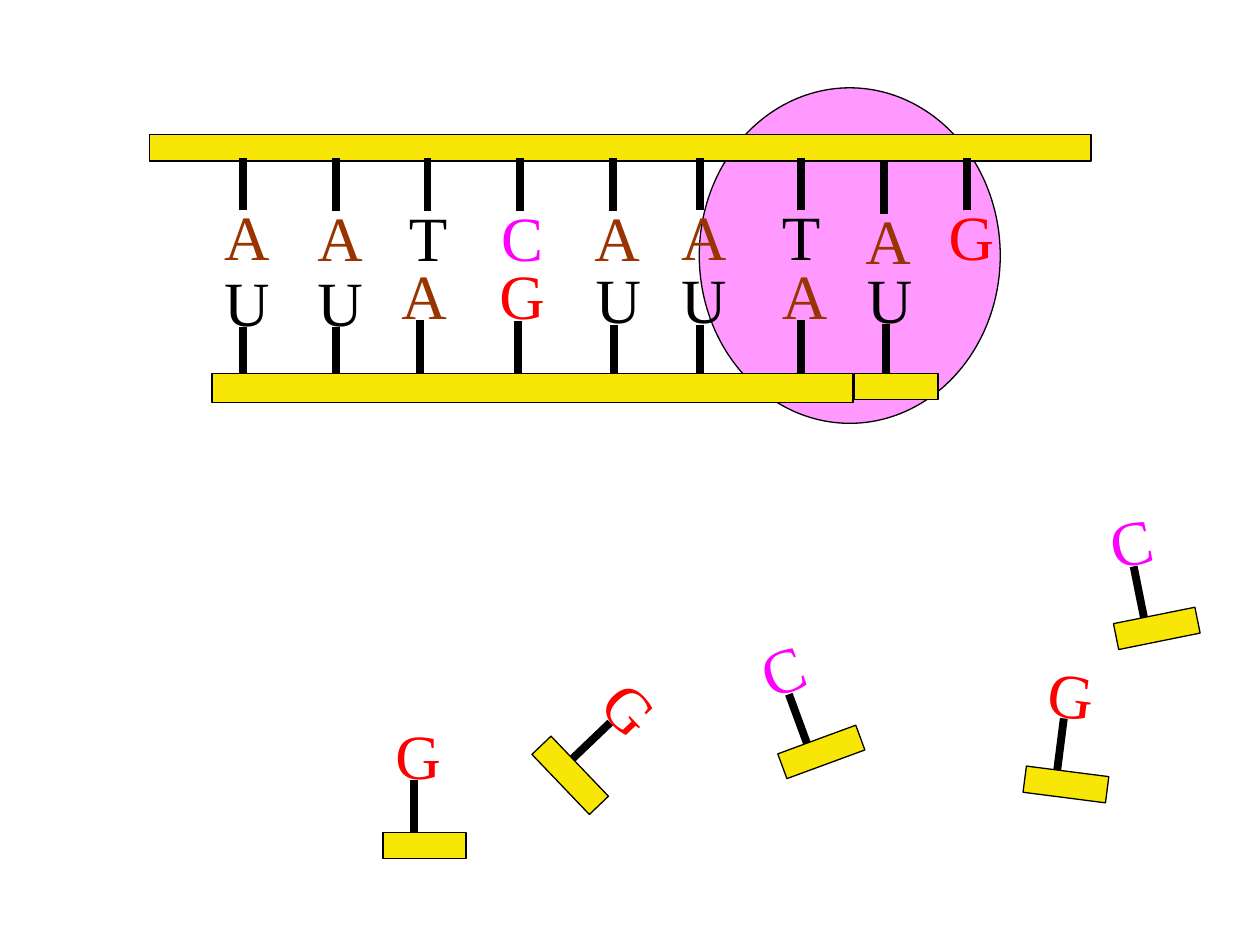
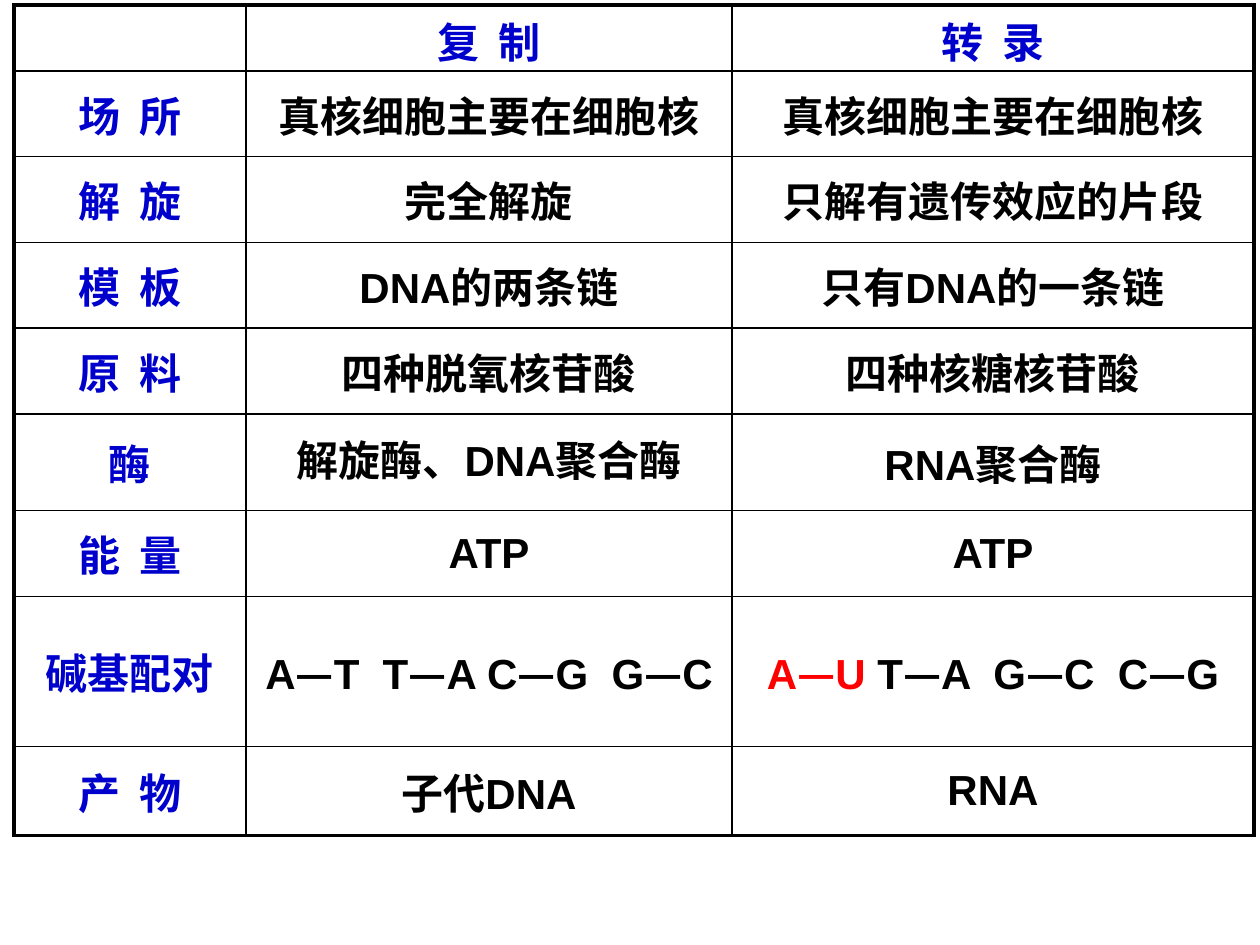
from dataclasses import dataclass
from math import cos, radians, sin

from lxml import etree
from pptx import Presentation
from pptx.dml.color import RGBColor
from pptx.enum.shapes import MSO_CONNECTOR, MSO_SHAPE
from pptx.enum.text import MSO_ANCHOR, PP_ALIGN
from pptx.oxml.ns import qn
from pptx.util import Pt

BLACK, RED, BLUE = "000000", "FF0000", "0000CC"
YELLOW, PINK = "F8E706", "FF99FF"
BASE_COLORS = {"A": "993300", "T": BLACK, "U": BLACK, "G": RED, "C": "FF00FF"}
SERIF, SANS, CJK = "Times New Roman", "Arial", "Noto Sans CJK SC"

LETTER_W, LETTER_H = 47.5, 49.7
BAR_W, BAR_H, BAR_DY = 47.5, 15.1, 52.5
STEM_DX = -6
UP_STEM, DOWN_STEM = (-14, -44.3), (15.2, 45.2)
THIN, THICK = 1, 2.25


@dataclass
class Base:
    letter: str
    cx: float
    cy: float
    angle: float = 0

    def place(self, dx: float, dy: float) -> tuple[float, float]:
        c, s = cos(radians(self.angle)), sin(radians(self.angle))
        return self.cx + dx * c - dy * s, self.cy + dx * s + dy * c


TEMPLATE = [
    Base("A", 144.7, 134.3), Base("A", 198, 134.7), Base("T", 250.3, 134.7),
    Base("C", 303.1, 134.7), Base("A", 356.4, 134.7), Base("A", 405.9, 134.3),
    Base("T", 463.5, 134.3), Base("A", 511.2, 136.4), Base("G", 558.7, 134.3),
]
TRANSCRIPT = [
    Base("U", 144.7, 171.7), Base("U", 198, 171.7), Base("A", 246, 167.8),
    Base("G", 302, 168.1), Base("U", 357.1, 170.3), Base("U", 405.9, 170.3),
    Base("A", 463.5, 167.8), Base("U", 512.1, 169.9),
]
FREE = [
    Base("G", 242.6, 430.7), Base("C", 650.7, 307.6, -11.4),
    Base("G", 363.8, 406.8, 46.3), Base("C", 451.2, 380.4, -20.2),
    Base("G", 615.8, 396.2, 7.3),
]

COLUMNS = [132.5, 277.9, 298.1]
ROW_HEIGHTS = [37.4, 49, 49, 49, 49, 55.4, 49, 85.7, 51.1]
ROWS = [
    ("", "复  制", "转  录"),
    ("场  所", "真核细胞主要在细胞核", "真核细胞主要在细胞核"),
    ("解  旋", "完全解旋", "只解有遗传效应的片段"),
    ("模  板", "DNA的两条链", "只有DNA的一条链"),
    ("原  料", "四种脱氧核苷酸", "四种核糖核苷酸"),
    ("酶", "解旋酶、DNA聚合酶", "RNA聚合酶"),
    ("能  量", "ATP", "ATP"),
    ("碱基配对", "A—T  T—A C—G  G—C", "A—U T—A  G—C  C—G"),
    ("产  物", "子代DNA", "RNA"),
]
NEW_PAIR = "A—U "
TIGHT_CELL = (5, 1)


def rgb(color: str) -> RGBColor:
    return RGBColor.from_string(color)


def add_run(p, text: str, font: str, size: float, color: str, bold: bool = False) -> None:
    r = p.add_run()
    r.text = text
    f = r.font
    f.name, f.size, f.bold = font, Pt(size), bold
    f.color.rgb = rgb(color)
    ea = etree.SubElement(r._r.get_or_add_rPr(), qn("a:ea"))
    ea.set("typeface", CJK)


def add_solid(slide, kind, x: float, y: float, w: float, h: float,
              color: str, angle: float = 0) -> None:
    sp = slide.shapes.add_shape(kind, Pt(x), Pt(y), Pt(w), Pt(h))
    sp.shadow.inherit = False
    sp.rotation = angle
    sp.fill.solid()
    sp.fill.fore_color.rgb = rgb(color)
    sp.line.color.rgb = rgb(BLACK)
    sp.line.width = Pt(0.75)


def add_letter(slide, base: Base) -> None:
    sp = slide.shapes.add_textbox(Pt(base.cx - LETTER_W / 2), Pt(base.cy - LETTER_H / 2),
                                  Pt(LETTER_W), Pt(LETTER_H))
    sp.rotation = base.angle
    tf = sp.text_frame
    tf.word_wrap = True
    add_run(tf.paragraphs[0], base.letter, SERIF, 36, BASE_COLORS[base.letter])


def add_stem(slide, base: Base, span: tuple[float, float]) -> None:
    ends = [Pt(v) for dy in span for v in base.place(STEM_DX, dy)]
    line = slide.shapes.add_connector(MSO_CONNECTOR.STRAIGHT, *ends)
    line.line.color.rgb = rgb(BLACK)
    line.line.width = Pt(4.5)
    etree.SubElement(line._element.spPr, qn("a:effectLst"))


def add_strand(slide, bases: list[Base], span: tuple[float, float]) -> None:
    for base in bases:
        add_letter(slide, base)
        add_stem(slide, base, span)


def build_pairing(slide) -> None:
    rect = MSO_SHAPE.RECTANGLE
    add_solid(slide, MSO_SHAPE.OVAL, 399.6, 50.2, 172, 191.7, PINK)
    add_solid(slide, rect, 85.5, 77, 538, BAR_H, YELLOW)
    add_strand(slide, TEMPLATE, UP_STEM)
    add_strand(slide, FREE, DOWN_STEM)
    for base in FREE:
        x, y = base.place(0, BAR_DY)
        add_solid(slide, rect, x - BAR_W / 2, y - BAR_H / 2, BAR_W, BAR_H, YELLOW, base.angle)
    add_strand(slide, TRANSCRIPT, DOWN_STEM)
    add_solid(slide, rect, 121.2, 213.4, 366.3, 16.5, YELLOW)
    add_solid(slide, rect, 488.5, 213.4, BAR_W, BAR_H, YELLOW)


def set_borders(cell, widths: dict[str, float]) -> None:
    tc_pr = cell._tc.get_or_add_tcPr()
    for i, (side, width) in enumerate(widths.items()):
        ln = etree.Element(qn(f"a:ln{side}"), w=str(Pt(width)))
        fill = etree.SubElement(ln, qn("a:solidFill"))
        etree.SubElement(fill, qn("a:srgbClr"), val=BLACK)
        tc_pr.insert(i, ln)


def add_cell_text(p, text: str, color: str) -> None:
    for i, part in enumerate(text.split("—")):
        if i:
            add_run(p, "—", CJK, 24, color, True)
        if part:
            add_run(p, part, SANS, 24, color, True)


def fill_cell(cell, text: str, row: int, col: int) -> None:
    cell.fill.background()
    cell.vertical_anchor = MSO_ANCHOR.MIDDLE
    cell.margin_left = cell.margin_right = Pt(0)
    if row == 0:
        cell.margin_top, cell.margin_bottom = Pt(2.8), Pt(0)
    set_borders(cell, {
        "L": THICK if col == 0 else THIN,
        "R": THICK if col == len(COLUMNS) - 1 else THIN,
        "T": THICK if row == 0 else THIN,
        "B": THICK if row == len(ROWS) - 1 else THIN,
    })
    if not text:
        return
    p = cell.text_frame.paragraphs[0]
    p.alignment = PP_ALIGN.CENTER
    if (row, col) == TIGHT_CELL:
        p.line_spacing = 0.8
    if text.startswith(NEW_PAIR):
        add_cell_text(p, NEW_PAIR, RED)
        text = text.removeprefix(NEW_PAIR)
    add_cell_text(p, text, BLUE if row == 0 or col == 0 else BLACK)


def build_comparison(slide) -> None:
    frame = slide.shapes.add_table(len(ROWS), len(COLUMNS), Pt(8), Pt(2.9),
                                   Pt(sum(COLUMNS)), Pt(sum(ROW_HEIGHTS)))
    table = frame.table
    table.first_row = table.horz_banding = False
    for column, width in zip(table.columns, COLUMNS):
        column.width = Pt(width)
    for i, (height, texts) in enumerate(zip(ROW_HEIGHTS, ROWS)):
        table.rows[i].height = Pt(height)
        for j, text in enumerate(texts):
            fill_cell(table.cell(i, j), text, i, j)


def main() -> None:
    prs = Presentation()
    prs.slide_width, prs.slide_height = Pt(720), Pt(540)
    for build in (build_pairing, build_comparison):
        build(prs.slides.add_slide(prs.slide_layouts[6]))
    prs.save("out.pptx")


if __name__ == "__main__":
    main()
